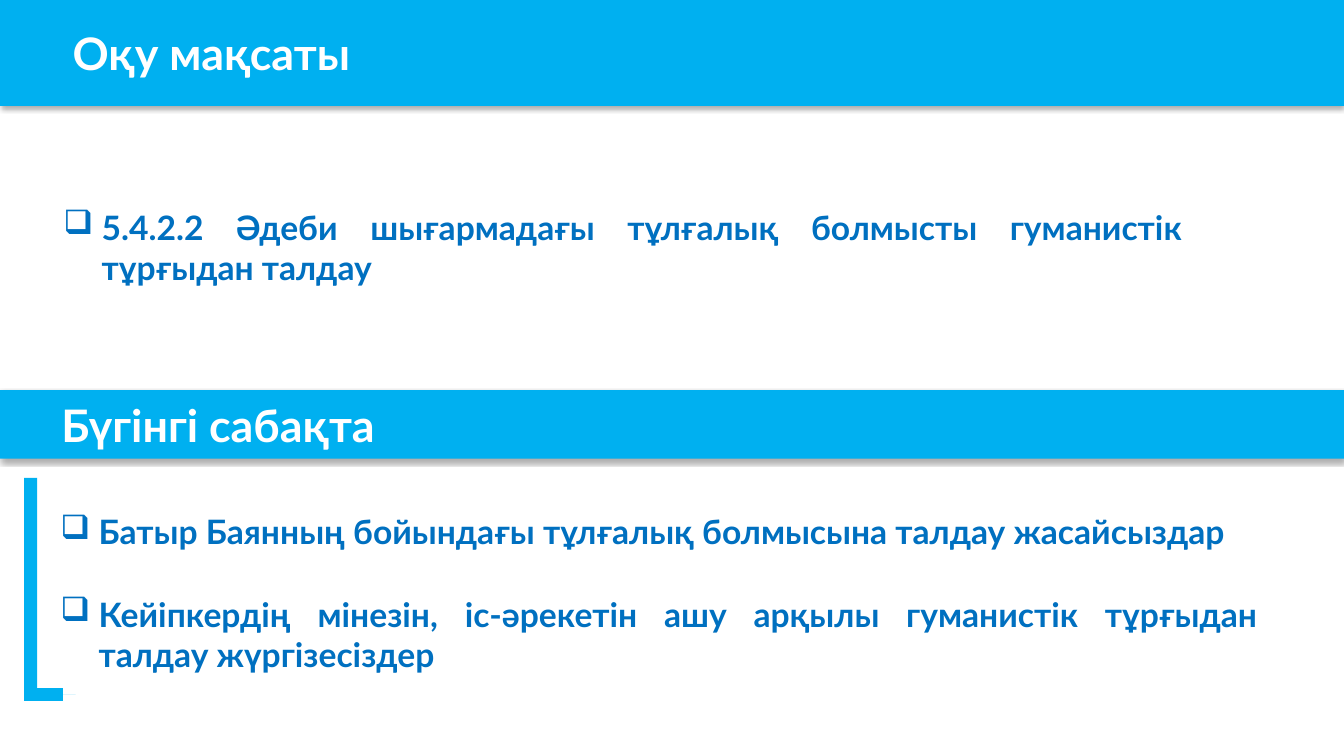
from lxml import etree
from pptx import Presentation
from pptx.dml.color import RGBColor
from pptx.enum.shapes import MSO_SHAPE
from pptx.enum.text import MSO_ANCHOR, PP_ALIGN
from pptx.oxml import parse_xml
from pptx.util import Inches, Pt

RECTANGLE = MSO_SHAPE.RECTANGLE
BENT_ARROW = MSO_SHAPE.BENT_UP_ARROW
MIDDLE, TOP = MSO_ANCHOR.MIDDLE, MSO_ANCHOR.TOP
LEFT, JUSTIFY = PP_ALIGN.LEFT, PP_ALIGN.JUSTIFY
DRAWING = "http://schemas.openxmlformats.org/drawingml/2006/main"
SKY, BLUE, WHITE = "00B0F0", "0070C0", "FFFFFF"
SHADOW = (
    f'<a:outerShdw xmlns:a="{DRAWING}" blurRad="{Pt(3.5)}" dist="{Pt(2.2)}" '
    'dir="5400000" algn="ctr" rotWithShape="0"><a:srgbClr val="000000">'
    '<a:alpha val="32000"/></a:srgbClr></a:outerShdw>'
)


def paint(color_format, color):
    color_format.rgb = RGBColor.from_string(color)


def write(frame, text, size=24, color=BLUE, align=JUSTIFY, anchor=TOP, inset=0.1, bullet=None):
    frame.word_wrap = True
    frame.vertical_anchor = anchor
    frame.margin_left = Inches(inset)
    paragraph = frame.paragraphs[0]
    paragraph.alignment = align
    if bullet:
        properties = paragraph._p.get_or_add_pPr()
        properties.set("marL", str(Inches(0.38)))
        properties.set("indent", str(Inches(-0.38)))
        etree.SubElement(properties, f"{{{DRAWING}}}buChar", char=bullet)
    run = paragraph.add_run()
    run.text = text
    run.font.name = "Lato"
    run.font.size = Pt(size)
    run.font.bold = True
    paint(run.font.color, color)


presentation = Presentation()
presentation.slide_width = Inches(13.33)
presentation.slide_height = Inches(7.5)
slide = presentation.slides.add_slide(presentation.slide_layouts[6])

headings = [
    ("Оқу мақсаты", 0, 1.05, 0.72),
    ("Бүгінгі сабақта", 3.87, 0.68, 0.61),
]
for heading, top, height, inset in headings:
    banner = slide.shapes.add_shape(RECTANGLE, 0, Inches(top), Inches(13.33), Inches(height))
    banner.fill.solid()
    paint(banner.fill.fore_color, SKY)
    banner.line.fill.background()
    banner.shadow.inherit = False
    banner._element.spPr.find(f"{{{DRAWING}}}effectLst").append(parse_xml(SHADOW))
    write(banner.text_frame, heading, size=32, color=WHITE, align=LEFT, anchor=MIDDLE, inset=inset)

bracket = slide.shapes.add_shape(BENT_ARROW, Inches(-0.58), Inches(5.56), Inches(2.15), Inches(0.51))
bracket.rotation = 90
for index, adjustment in enumerate((0.25, 0, 0.25)):
    bracket.adjustments[index] = adjustment
bracket.fill.solid()
paint(bracket.fill.fore_color, SKY)
bracket.line.fill.background()
bracket.shadow.inherit = False

goals = [
    ("5.4.2.2 Әдеби шығармадағы тұлғалық болмысты гуманистік тұрғыдан талдау", 0.53, 2, 11.29),
    ("Батыр Баянның бойындағы тұлғалық болмысына талдау жасайсыздар", 0.5, 5.02, 12.2),
    ("Кейіпкердің мінезін, іс-әрекетін ашу арқылы гуманистік тұрғыдан талдау жүргізесіздер", 0.5, 5.84, 12.07),
]
for goal, left, top, width in goals:
    goal_box = slide.shapes.add_textbox(Inches(left), Inches(top), Inches(width), Inches(0.91))
    write(goal_box.text_frame, goal, bullet="❑")

presentation.save("out.pptx")
